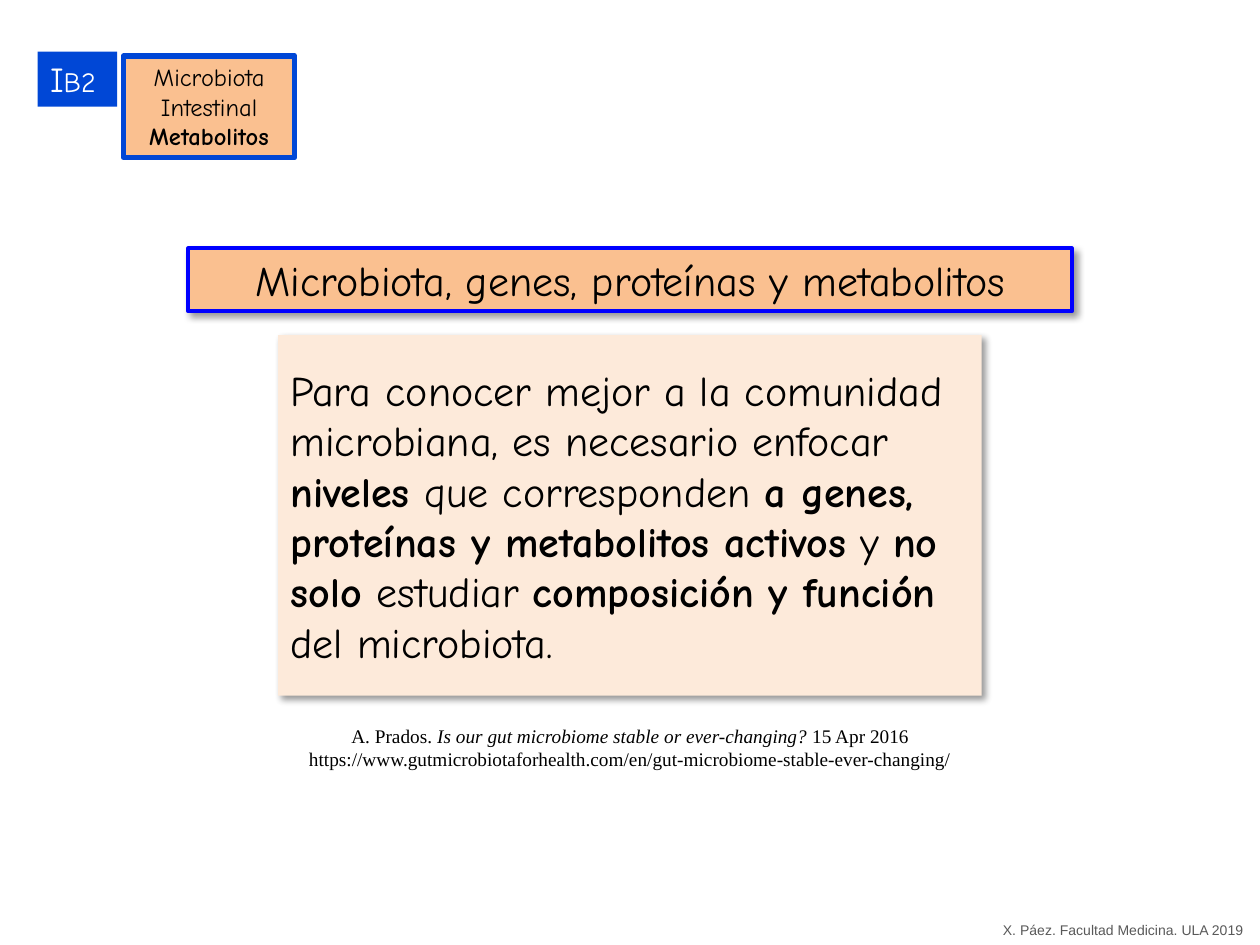
from dataclasses import dataclass

import pptx
import pptx.dml.color
import pptx.enum.shapes
import pptx.enum.text
import pptx.oxml
import pptx.oxml.ns
import pptx.util

Pt = pptx.util.Pt
ALIGN = pptx.enum.text.PP_ALIGN
ANCHOR = pptx.enum.text.MSO_ANCHOR


@dataclass(frozen=True)
class Theme:
    # Colours
    black: str = "000000"
    white: str = "FFFFFF"
    grey: str = "595959"
    blue: str = "0047D6"
    bright_blue: str = "0000FF"
    orange: str = "FAC090"
    cream: str = "FDEADA"
    # Fonts
    main: str = "Comic Neue"
    serif: str = "Times New Roman"
    sans: str = "Arial"
    # Type sizes
    large: int = 24
    tag: int = 20
    tag_small: int = 16
    label: int = 14
    source: int = 11
    footer: int = 8


T = Theme()


def rgb(value):
    return pptx.dml.color.RGBColor.from_string(value)


def add_run(p, text, font=T.main, size=T.large, color=T.black, bold=False, italic=False):
    r = p.add_run()
    r.text = text
    r.font.name = font
    r.font.size = Pt(size)
    r.font.color.rgb = rgb(color)
    r.font.bold = bold
    r.font.italic = italic


def write(sp, paragraphs, align=ALIGN.LEFT, anchor=ANCHOR.TOP, wrap=True, **style):
    """Each paragraph is a list of (text, format changes) pairs."""
    tf = sp.text_frame
    tf.word_wrap = wrap
    tf.vertical_anchor = anchor
    for i, runs in enumerate(paragraphs):
        p = tf.add_paragraph() if i else tf.paragraphs[0]
        p.alignment = align
        for text, changes in runs:
            add_run(p, text, **{**style, **changes})


def add_shadow(sp):
    effects = sp._element.spPr.find(pptx.oxml.ns.qn("a:effectLst"))
    effects.append(pptx.oxml.parse_xml(
        f'<a:outerShdw {pptx.oxml.ns.nsdecls("a")} blurRad="{Pt(4)}" dist="{Pt(3)}"'
        ' dir="2700000" algn="tl" rotWithShape="0">'
        f'<a:srgbClr val="{T.black}"><a:alpha val="40000"/></a:srgbClr></a:outerShdw>'))


def add_box(s, x, y, w, h, fill, line=None, line_width=0, shadow=False):
    sp = s.shapes.add_shape(pptx.enum.shapes.MSO_SHAPE.RECTANGLE, Pt(x), Pt(y), Pt(w), Pt(h))
    sp.fill.solid()
    sp.fill.fore_color.rgb = rgb(fill)
    if line:
        sp.line.color.rgb = rgb(line)
        sp.line.width = Pt(line_width)
    else:
        sp.line.fill.background()
    sp.shadow.inherit = False
    if shadow:
        add_shadow(sp)
    return sp


def add_text(s, x, y, w, h):
    return s.shapes.add_textbox(Pt(x), Pt(y), Pt(w), Pt(h))


def main():
    prs = pptx.Presentation()
    prs.slide_width, prs.slide_height = Pt(720), Pt(540)
    s = prs.slides.add_slide(prs.slide_layouts[6])
    bold, italic = {"bold": True}, {"italic": True}

    # Main statement
    statement = add_box(s, 159, 191.5, 402, 206, T.cream, shadow=True)
    write(statement, [[
        ("Para conocer mejor a la comunidad microbiana, es necesario enfocar ", {}),
        ("niveles ", bold),
        ("que corresponden ", {}),
        ("a genes, proteínas y metabolitos activos", bold),
        (" y ", {}),
        ("no solo ", bold),
        ("estudiar ", {}),
        ("composición y función", bold),
        (" del microbiota.", {}),
    ]], anchor=ANCHOR.MIDDLE)

    # Source and footer
    write(add_text(s, 168, 410.5, 384, 34), [
        [("A. Prados. ", {}),
         ("Is our gut microbiome stable or ever-changing?", italic),
         (" 15 Apr 2016", {})],
        [("https://www.gutmicrobiotaforhealth.com/en/gut-microbiome-stable-ever-changing/", {})],
    ], align=ALIGN.CENTER, font=T.serif, size=T.source)
    write(add_text(s, 566, 523, 154, 17), [[("X. Páez. Facultad Medicina. ULA 2019", {})]],
          wrap=False, font=T.sans, size=T.footer, color=T.grey)

    # Title
    title = add_box(s, 107.5, 142, 505, 36, T.orange, T.bright_blue, 2.25, shadow=True)
    write(title, [[("Microbiota, genes, proteínas y metabolitos", {})]], align=ALIGN.CENTER)

    # Section label and its number
    section = add_box(s, 70.5, 32, 98, 58, T.orange, T.blue, 3)
    write(section, [[("Microbiota Intestinal", {})], [("Metabolitos", bold)]],
          align=ALIGN.CENTER, size=T.label)
    number = add_box(s, 21.5, 29.5, 45.5, 31.5, T.blue)
    write(number, [[("I", {}), ("B2", {"size": T.tag_small})]],
          wrap=False, size=T.tag, color=T.white)

    prs.save("out.pptx")


if __name__ == "__main__":
    main()
